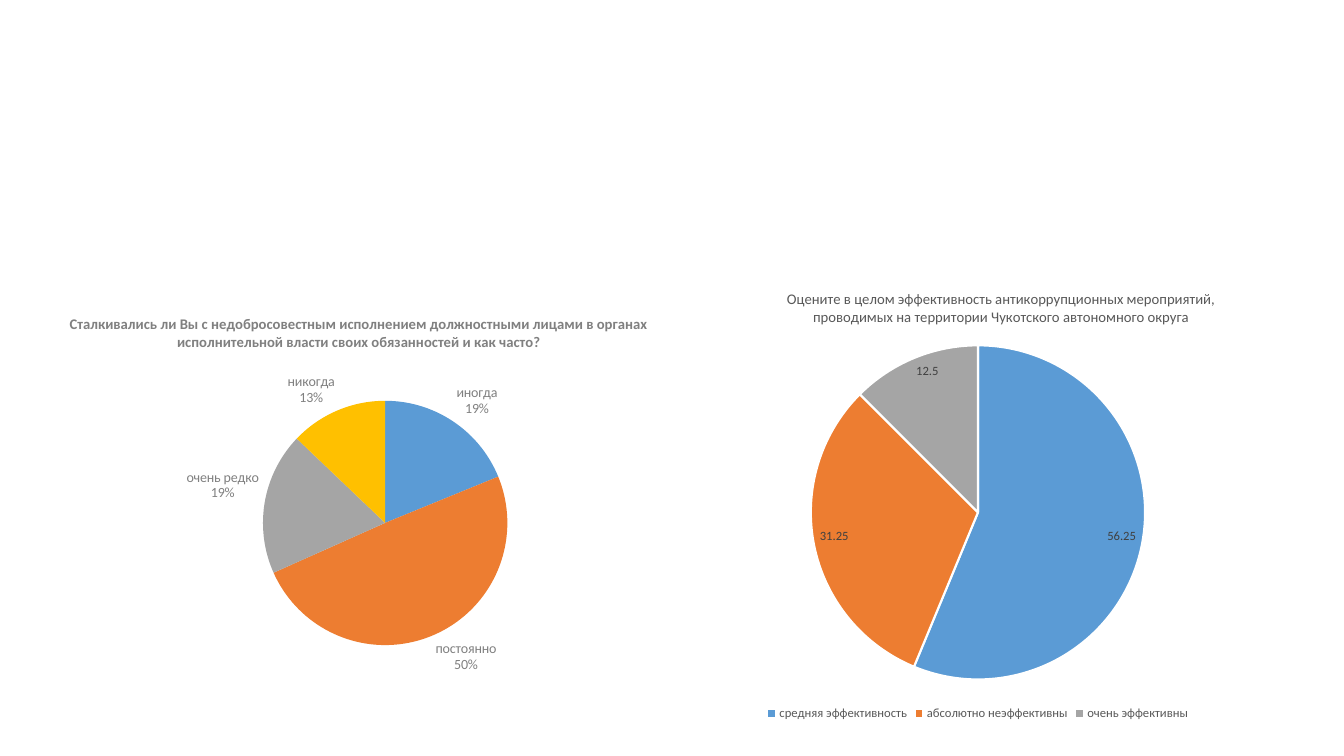
from lxml import etree
from pptx import Presentation
from pptx.chart.data import CategoryChartData
from pptx.dml.color import RGBColor
from pptx.enum.chart import XL_CHART_TYPE, XL_LABEL_POSITION, XL_LEGEND_POSITION
from pptx.oxml.ns import qn
from pptx.util import Inches, Pt

PIE = XL_CHART_TYPE.PIE
OUTSIDE_END = XL_LABEL_POSITION.OUTSIDE_END
INSIDE_END = XL_LABEL_POSITION.INSIDE_END
BOTTOM = XL_LEGEND_POSITION.BOTTOM

FONT = "Calibri"
SLICE_COLORS = ["5B9BD5", "ED7D31", "A5A5A5", "FFC000"]


def rgb(value):
    return RGBColor.from_string(value)


def format_font(font, size, color, bold=False):
    font.name = FONT
    font.size = Pt(size)
    font.bold = bold
    font.color.rgb = rgb(color)


def set_title(chart, text, **fmt):
    tf = chart.chart_title.text_frame
    tf.text = text
    format_font(tf.paragraphs[0].runs[0].font, **fmt)
    chart.chart_title.include_in_layout = False


def set_layout(parent, inner=False, **fractions):
    """Place a chart part at fractions of the chart's size."""
    layout = parent.find(qn("c:layout"))
    if layout is None:
        layout = etree.Element(qn("c:layout"))
        text = parent.find(qn("c:tx"))
        if text is None:
            parent.insert(0, layout)
        else:
            text.addnext(layout)
    for child in list(layout):
        layout.remove(child)
    manual = etree.SubElement(layout, qn("c:manualLayout"))
    settings = {"layoutTarget": "inner"} if inner else {}
    settings.update(xMode="edge", yMode="edge", **fractions)
    for tag, value in settings.items():
        etree.SubElement(manual, qn(f"c:{tag}")).set("val", str(value))


def add_pie(s, box, title, data, title_fmt, label_fmt, position, plot_area,
            percent=False, border=None):
    chart_data = CategoryChartData()
    chart_data.categories = list(data)
    chart_data.add_series("Series 1", list(data.values()))
    chart = s.shapes.add_chart(PIE, *map(Inches, box), chart_data).chart
    format_font(chart.font, 10, "000000")
    chart.has_legend = False
    set_title(chart, title, **title_fmt)
    set_layout(chart._chartSpace.chart.plotArea, inner=True, **plot_area)

    # Slices
    plot = chart.plots[0]
    plot.vary_by_categories = True
    for i, color in enumerate(SLICE_COLORS[:len(data)]):
        fmt = plot.series[0].points[i].format
        fmt.fill.solid()
        fmt.fill.fore_color.rgb = rgb(color)
        if border:
            fmt.line.color.rgb = rgb(border)
            fmt.line.width = Pt(1.5)
        else:
            fmt.line.fill.background()

    # Labels
    labels = plot.series[0].data_labels
    labels.show_value = not percent
    labels.show_percentage = percent
    labels.show_category_name = percent
    labels.show_legend_key = False
    labels.position = position
    format_font(labels.font, **label_fmt)
    if percent:
        labels.number_format = "0%"
        labels.number_format_is_linked = False
        separator = etree.Element(qn("c:separator"))
        separator.text = "\n"
        labels._element.find(qn("c:showBubbleSize")).addnext(separator)
    return chart


def add_legend(chart, **fmt):
    chart.has_legend = True
    chart.legend.position = BOTTOM
    chart.legend.include_in_layout = False
    format_font(chart.legend.font, **fmt)


def main():
    prs = Presentation()
    prs.slide_width, prs.slide_height = Inches(13.33), Inches(7.5)
    s = prs.slides.add_slide(prs.slide_layouts[6])

    # Misconduct frequency
    add_pie(
        s, (-0.16, 2.96, 7.44, 3.91),
        "Сталкивались ли Вы с недобросовестным исполнением должностными "
        "лицами в органах исполнительной власти своих обязанностей и как часто?",
        {"иногда": 19, "постоянно": 50, "очень редко": 19, "никогда": 13},
        title_fmt=dict(size=10.5, color="808080", bold=True),
        label_fmt=dict(size=10, color="808080"),
        position=OUTSIDE_END, percent=True,
        plot_area=dict(x=0.37, y=0.26, w=0.33, h=0.62))

    # Effectiveness of measures
    chart = add_pie(
        s, (6.6, 2.71, 6.2, 4.48),
        "Оцените в целом эффективность антикоррупционных мероприятий, "
        "проводимых на территории Чукотского автономного округа",
        {"средняя эффективность": 56.25, "абсолютно неэффективны": 31.25,
         "очень эффективны": 12.5},
        title_fmt=dict(size=10.5, color="595959"),
        label_fmt=dict(size=9, color="404040"),
        position=INSIDE_END, border="FFFFFF",
        plot_area=dict(x=0.23, y=0.16, w=0.54, h=0.74))
    set_layout(chart.chart_title._element, x=0.19, y=0.03)
    add_legend(chart, size=9, color="595959")

    prs.save("out.pptx")


if __name__ == "__main__":
    main()
